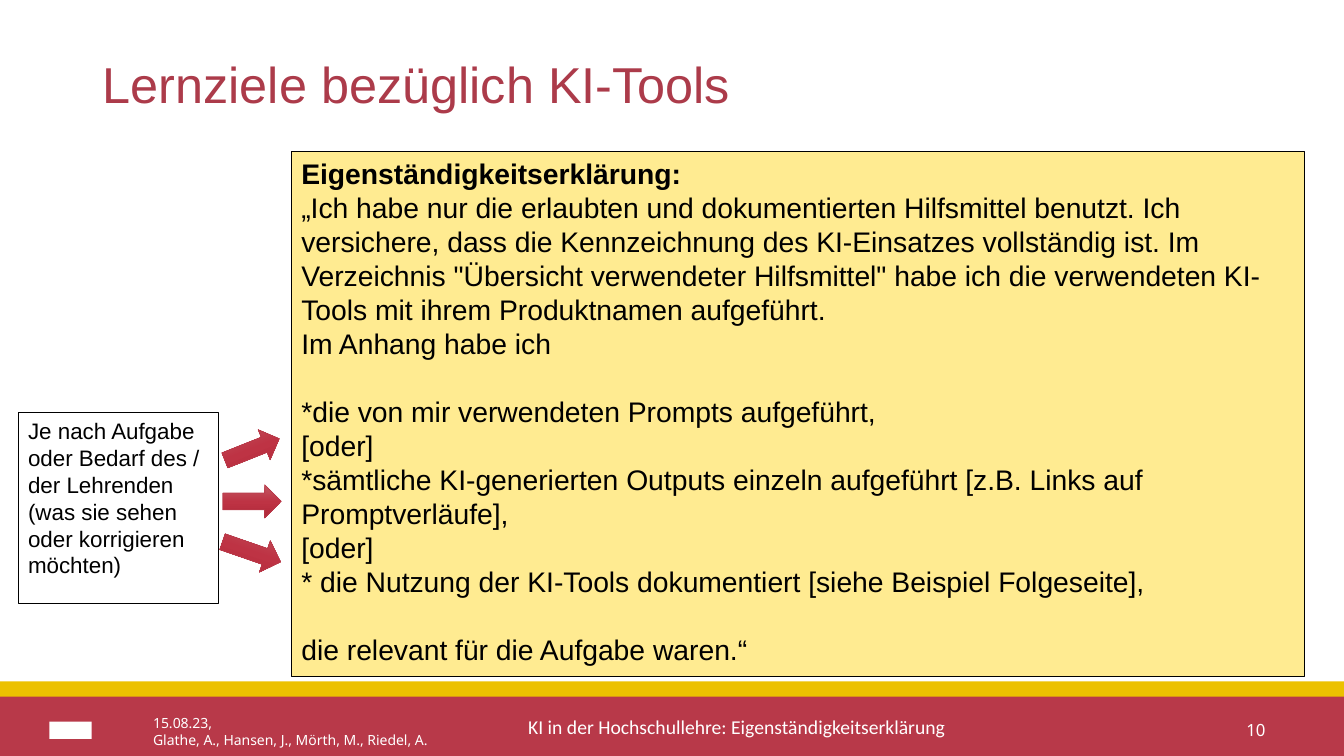
from copy import deepcopy

from pptx import Presentation
from pptx.dml.color import RGBColor
from pptx.enum.shapes import MSO_SHAPE as Preset
from pptx.enum.text import MSO_ANCHOR as Anchor, PP_ALIGN as Align
from pptx.util import Inches, Pt

WHITE, BLACK = "FFFFFF", "000000"
RED, YELLOW, CREAM, TITLE_RED = "B83949", "ECC100", "FFEB91", "AC3B4A"
ARROW_STOPS = [(0, "C25963"), (0.5, "BE3344"), (1, "AF2738")]


def color(value):
    return RGBColor.from_string(value)


class SlideBuilder:
    """Adds styled elements to one page; every frame is (left, top, width, height) in inches."""

    def __init__(self, page, font="Arial"):
        self.page = page
        self.font = font

    def shape(self, frame, preset=Preset.RECTANGLE, fill=None, line=None, weight=0.75):
        box = self.page.shapes.add_shape(preset, *map(Inches, frame))
        box.shadow.inherit = False
        if fill:
            box.fill.solid()
            box.fill.fore_color.rgb = color(fill)
        else:
            box.fill.background()
        if line:
            box.line.color.rgb = color(line)
            box.line.width = Pt(weight)
        else:
            box.line.fill.background()
        return box

    def arrow(self, frame, rotation=0):
        arrow = self.shape(frame, Preset.RIGHT_ARROW, line=RED, weight=0.5)
        arrow.rotation = rotation
        arrow.fill.gradient()
        arrow.fill.gradient_angle = 270
        stops = arrow.fill._fill._gradFill.gsLst
        stops.insert(1, deepcopy(stops[0]))
        for stop, (position, value) in zip(arrow.fill.gradient_stops, ARROW_STOPS):
            stop.position = position
            stop.color.rgb = color(value)

    def set_text(self, box, paragraphs, size, ink=BLACK, font=None, anchor=Anchor.TOP,
                 align=Align.LEFT, wrap=True, spacing=None):
        """Fill the box; each paragraph is (text, bold, points of space before)."""
        frame = box.text_frame
        frame.word_wrap = wrap
        frame.vertical_anchor = anchor
        for index, (text, bold, before) in enumerate(paragraphs):
            para = frame.paragraphs[0] if index == 0 else frame.add_paragraph()
            para.alignment = align
            para.space_before = Pt(before)
            if spacing:
                para.line_spacing = spacing
            for number, line in enumerate(text.split("\n")):
                if number:
                    para.add_line_break()
                span = para.add_run()
                span.text = line
                span.font.name = font or self.font
                span.font.size = Pt(size)
                span.font.bold = bold
                span.font.color.rgb = color(ink)

    def label(self, frame, lines, size, **style):
        box = self.page.shapes.add_textbox(*map(Inches, frame))
        self.set_text(box, [(line, False, 0) for line in lines], size, **style)


DECLARATION_SIZE = 20.2
GAP = 24.3  # height of one line of the declaration
DECLARATION = [
    ("Eigenständigkeitserklärung:", True, 0),
    ("„Ich habe nur die erlaubten und dokumentierten Hilfsmittel benutzt. Ich versichere, "
     "dass die Kennzeichnung des KI-Einsatzes vollständig ist. Im Verzeichnis \"Übersicht "
     "verwendeter Hilfsmittel\" habe ich die verwendeten KI-Tools mit ihrem Produktnamen "
     "aufgeführt.", False, 0),
    ("Im Anhang habe ich", False, 0),
    ("*die von mir verwendeten Prompts aufgeführt,", False, GAP),
    ("[oder]", False, 0),
    ("*sämtliche KI-generierten Outputs einzeln aufgeführt [z.B. Links auf Promptverläufe],",
     False, 0),
    ("[oder]", False, 0),
    ("* die Nutzung der KI-Tools dokumentiert [siehe Beispiel Folgeseite],", False, 0),
    ("die relevant für die Aufgabe waren.“", False, GAP),
]
HINT = ("Je nach Aufgabe oder Bedarf des / der Lehrenden\n"
        "(was sie sehen oder korrigieren möchten)")


def main():
    deck = Presentation()
    deck.slide_width, deck.slide_height = Inches(13.33), Inches(7.5)
    slide = SlideBuilder(deck.slides.add_slide(deck.slide_layouts[6]))

    # Footer
    for top, fill in ((6.76, YELLOW), (6.91, RED)):
        slide.shape((0, top, 13.33, 0.59), fill=fill)
    slide.shape((0.49, 7.16, 0.42, 0.17), fill=WHITE)
    slide.label((5.14, 7.04, 4.42, 0.34),
                ["KI in der Hochschullehre: Eigenständigkeitserklärung"],
                14, ink=WHITE, font="Calibri", wrap=False)
    small = dict(ink=WHITE, font="Noto Sans", anchor=Anchor.MIDDLE)
    slide.label((9.65, 7.04, 3, 0.4), ["10"], 12, align=Align.RIGHT, **small)
    slide.label((1.42, 7.06, 3.2, 0.4),
                ["15.08.23,", "Glathe, A., Hansen, J., Mörth, M., Riedel, A."], 10, **small)

    # Title
    slide.label((0.92, 0.4, 11.5, 0.92), ["Lernziele bezüglich KI-Tools"], 36,
                ink=TITLE_RED, anchor=Anchor.MIDDLE, spacing=0.9)

    # Declaration, hint and the arrows between them
    declaration = slide.shape((2.89, 1.5, 10.05, 5.21), fill=CREAM, line=BLACK)
    slide.set_text(declaration, DECLARATION, DECLARATION_SIZE)
    hint = slide.shape((0.18, 4.09, 1.98, 1.89), line=BLACK, weight=0.25)
    slide.set_text(hint, [(HINT, False, 0)], 16)
    slide.arrow((2.21, 4.3, 0.58, 0.32), rotation=338.3)
    slide.arrow((2.21, 4.81, 0.58, 0.33))
    slide.arrow((2.19, 5.31, 0.61, 0.33), rotation=19.1)

    deck.save("out.pptx")


if __name__ == "__main__":
    main()
